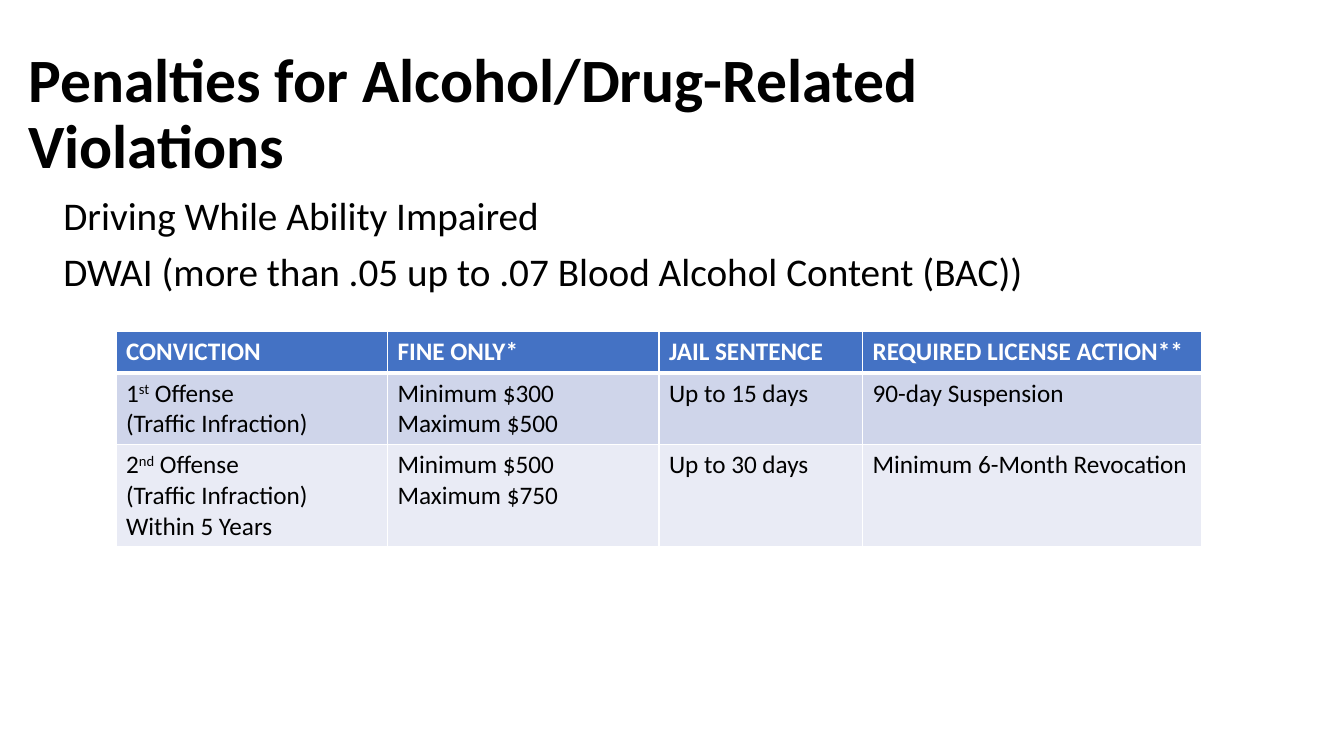
import pptx
import pptx.dml.color
import pptx.enum.text
import pptx.util
from lxml import etree
from pptx.oxml.ns import qn

COLOURS = {"ink": "000000", "paper": "FFFFFF", "header": "4472C4",
           "band_dark": "CFD5EA", "band_light": "E9EBF5"}

# Column widths are in the ratio 4:4:3:5; ^...^ marks superscript
COLUMN_WEIGHTS = [4, 4, 3, 5]
PENALTIES = [
    [["CONVICTION"], ["FINE ONLY*"], ["JAIL SENTENCE"],
     ["REQUIRED LICENSE ACTION**"]],
    [["1^st^ Offense", "(Traffic Infraction)"],
     ["Minimum $300", "Maximum $500"], ["Up to 15 days"],
     ["90-day Suspension"]],
    [["2^nd^ Offense", "(Traffic Infraction)", "Within 5 Years"],
     ["Minimum $500", "Maximum $750"], ["Up to 30 days"],
     ["Minimum 6-Month Revocation"]],
]


def rgb(name):
    return pptx.dml.color.RGBColor.from_string(COLOURS[name])


class PenaltySlide:
    """Style and current slide; lengths are percentages of the slide size."""

    font_name = "Calibri"

    def __init__(self, deck):
        self.width, self.height = deck.slide_width, deck.slide_height
        self.slide = deck.slides.add_slide(deck.slide_layouts[5])
        self.slide.background.fill.solid()
        self.slide.background.fill.fore_color.rgb = rgb("paper")

    def across(self, share):
        return round(self.width * share / 100)

    def down(self, share):
        return round(self.height * share / 100)

    def box(self, left, top, width, height):
        return (self.across(left), self.down(top),
                self.across(width), self.down(height))

    def set_lines(self, frame, lines, size, colour="ink", bold=False, **spacing):
        font_format = {"name": self.font_name, "size": pptx.util.Pt(size),
                       "bold": bold}
        for number, line in enumerate(lines):
            paragraph = frame.paragraphs[0] if number == 0 else frame.add_paragraph()
            paragraph_format = {"alignment": pptx.enum.text.PP_ALIGN.LEFT, **spacing}
            if number == 0:
                paragraph_format["space_before"] = pptx.util.Pt(0)
            for attribute, value in paragraph_format.items():
                setattr(paragraph, attribute, value)
            for part, piece in enumerate(line.split("^")):
                run = paragraph.add_run()
                run.text = piece
                for attribute, value in font_format.items():
                    setattr(run.font, attribute, value)
                run.font.color.rgb = rgb(colour)
                if part % 2:
                    run.font._element.set("baseline", "30000")

    def title(self, text, place, size):
        heading = self.slide.shapes.title
        heading.left, heading.top, heading.width, heading.height = self.box(*place)
        frame_format = {"word_wrap": True,
                        "auto_size": pptx.enum.text.MSO_AUTO_SIZE.NONE,
                        "vertical_anchor": pptx.enum.text.MSO_ANCHOR.MIDDLE}
        for attribute, value in frame_format.items():
            setattr(heading.text_frame, attribute, value)
        self.set_lines(heading.text_frame, [text], size, bold=True,
                       line_spacing=0.9)

    def text(self, lines, place, size):
        frame = self.slide.shapes.add_textbox(*self.box(*place)).text_frame
        frame.word_wrap = True
        self.set_lines(frame, lines, size, line_spacing=0.9,
                       space_before=pptx.util.Pt(10))

    def borders(self, cell, bottom):
        properties = cell._tc.get_or_add_tcPr()
        sides = {"a:lnL": 1, "a:lnR": 1, "a:lnT": 1, "a:lnB": bottom}
        for position, (side, points) in enumerate(sides.items()):
            line = etree.Element(qn(side), w=str(pptx.util.Pt(points)))
            fill = etree.SubElement(line, qn("a:solidFill"))
            etree.SubElement(fill, qn("a:srgbClr"), val=COLOURS["paper"])
            properties.insert(position, line)

    def table(self, rows, weights, place, size):
        table = self.slide.shapes.add_table(
            len(rows), len(weights), *self.box(*place)).table
        for column, weight in zip(table.columns, weights):
            column.width = self.across(place[2] * weight / sum(weights))
        fills = ["header", "band_dark", "band_light"]
        for r, row in enumerate(rows):
            # Cell margins plus one step for each line of the tallest cell
            table.rows[r].height = self.down(1.47 + 4 * max(map(len, row)))
            for c, lines in enumerate(row):
                cell = table.cell(r, c)
                cell.fill.solid()
                cell.fill.fore_color.rgb = rgb(fills[r])
                self.borders(cell, bottom=3 if r == 0 else 1)
                self.set_lines(cell.text_frame, lines, size,
                               "paper" if r == 0 else "ink", bold=r == 0)


def main():
    deck = pptx.Presentation()
    deck.slide_width = pptx.util.Inches(13.33)
    deck.slide_height = pptx.util.Inches(7.5)
    penalties = PenaltySlide(deck)

    # Heading and the offence it covers
    penalties.title("Penalties for Alcohol/Drug-Related Violations",
                    (1.35, 5.6, 86.27, 19.33), 44)
    penalties.text(["Driving While Ability Impaired",
                    "DWAI (more than .05 up to .07 Blood Alcohol Content (BAC))"],
                   (3.98, 25.33, 90.62, 64.8), 28)

    # Penalties by conviction
    penalties.table(PENALTIES, COLUMN_WEIGHTS, (8.63, 43.87, 80.8, 28.4), 18)
    deck.save("out.pptx")


if __name__ == "__main__":
    main()
